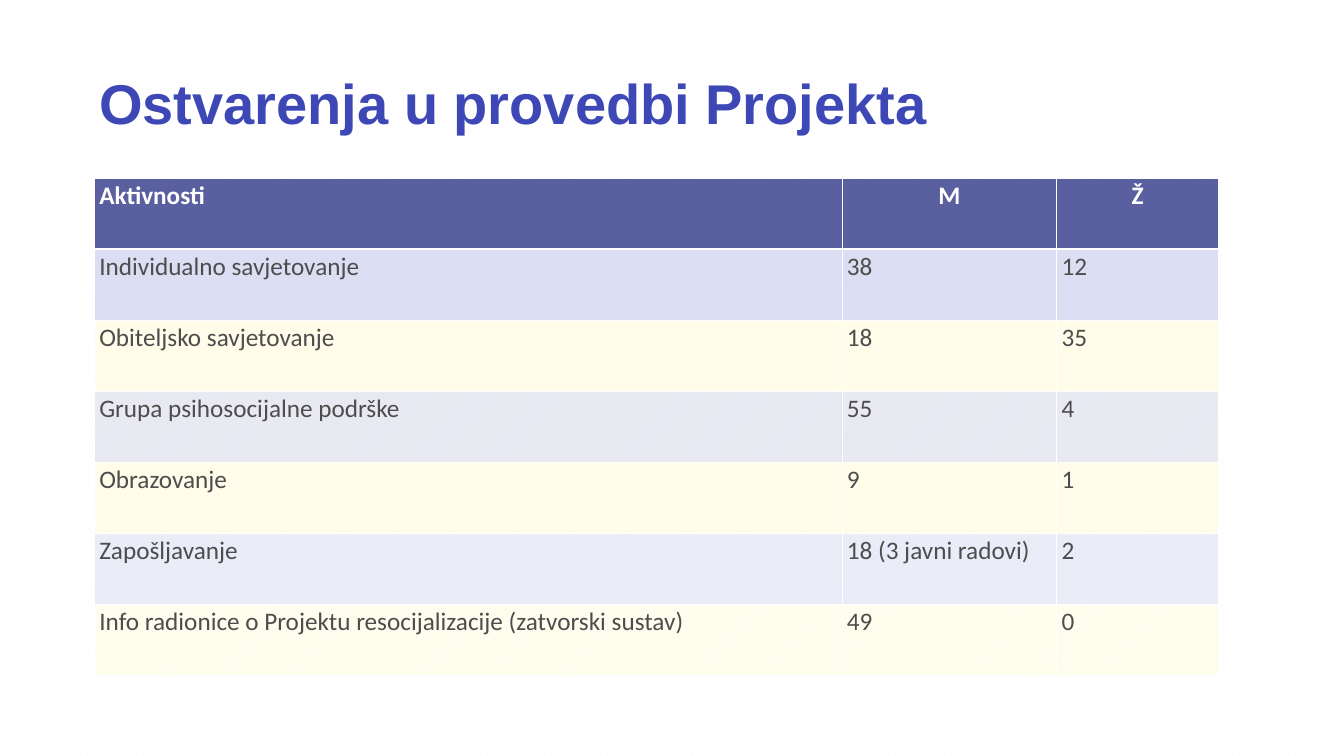
"""Build the slide that tabulates the project's activities by gender."""
from dataclasses import dataclass

from lxml import etree
from pptx import Presentation, util as u
from pptx.dml.color import RGBColor
from pptx.enum import dml, text
from pptx.oxml import ns

PX = 9144
WHITE = RGBColor(0xFF, 0xFF, 0xFF)
PALE_BLUE = RGBColor(0xF9, 0xF9, 0xFF)
TITLE_BLUE = RGBColor(0x3D, 0x47, 0xB5)
HEADER_BLUE = RGBColor(0x5A, 0x60, 0x9F)
LAVENDER = RGBColor(0xC7, 0xCA, 0xEC)
CREAM = RGBColor(0xFF, 0xFC, 0xE9)
SLATE = RGBColor(0x9B, 0x9F, 0xC6)
PERIWINKLE = RGBColor(0xAB, 0xB0, 0xE3)
YELLOW = RGBColor(0xFF, 0xFA, 0xB7)
GREY = RGBColor(0x4D, 0x4D, 0x4D)

COLUMN_WIDTHS = (1483, 426, 321)
ROW_HEIGHT = 141
THIN, THICK = 1, 3


@dataclass(frozen=True)
class Activity:
    """One table row with its fill and opacity in percent."""
    name: str
    men: str
    women: str
    fill: RGBColor
    opacity: int = 100
    header: bool = False


ACTIVITIES = (
    Activity("Aktivnosti", "M", "Ž", HEADER_BLUE, header=True),
    Activity("Individualno savjetovanje", "38", "12", LAVENDER, 62),
    Activity("Obiteljsko savjetovanje", "18", "35", CREAM),
    Activity("Grupa psihosocijalne podrške", "55", "4", SLATE, 22),
    Activity("Obrazovanje", "9", "1", CREAM),
    Activity("Zapošljavanje", "18 (3 javni radovi)", "2", PERIWINKLE, 24),
    Activity("Info radionice o Projektu resocijalizacije (zatvorski sustav)",
             "49", "0", YELLOW, 24),
)


def px(length: int) -> u.Emu:
    """Turn px into EMU."""
    return u.Emu(length * PX)


def add_run(paragraph, words: str, font: str, size: int, color: RGBColor, bold: bool) -> None:
    """Append one styled run."""
    run = paragraph.add_run()
    run.text = words
    run.font.name = font
    run.font.size = u.Pt(size)
    run.font.bold = bold
    run.font.color.rgb = color


def fill_cell(cell, color: RGBColor, opacity: int) -> None:
    """Fill a cell, see-through where the opacity is below 100."""
    cell.fill.solid()
    cell.fill.fore_color.rgb = color
    if opacity < 100:
        tint = cell._tc.tcPr.find(".//" + ns.qn("a:srgbClr"))
        etree.SubElement(tint, ns.qn("a:alpha"), val=str(opacity * 1000))


def border_cell(cell, top: int, bottom: int) -> None:
    """Draw white borders, with top and bottom widths in points."""
    sides = {"L": THIN, "R": THIN, "T": top, "B": bottom}
    for place, (side, width) in enumerate(sides.items()):
        line = etree.Element(ns.qn(f"a:ln{side}"), w=str(u.Pt(width)))
        solid = etree.SubElement(line, ns.qn("a:solidFill"))
        etree.SubElement(solid, ns.qn("a:srgbClr"), val=str(WHITE))
        cell._tc.tcPr.insert(place, line)


def add_title(slide, words: str) -> None:
    """Add the slide heading."""
    frame = slide.shapes.add_textbox(px(187), px(131), px(1868), px(145)).text_frame
    frame.word_wrap = True
    frame.auto_size = text.MSO_AUTO_SIZE.SHAPE_TO_FIT_TEXT
    add_run(frame.paragraphs[0], words, "Arial", 80, TITLE_BLUE, True)


def add_activity_table(slide, activities: tuple[Activity, ...]) -> None:
    """Add the table with one row per activity."""
    table = slide.shapes.add_table(
        len(activities), len(COLUMN_WIDTHS), px(187), px(353),
        px(sum(COLUMN_WIDTHS)), px(ROW_HEIGHT * len(activities))).table
    table.horz_banding = False
    for column, width in zip(table.columns, COLUMN_WIDTHS):
        column.width = px(width)
    for index, (row, activity) in enumerate(zip(table.rows, activities)):
        row.height = px(ROW_HEIGHT)
        entries = (activity.name, activity.men, activity.women)
        for position, (cell, entry) in enumerate(zip(row.cells, entries)):
            fill_cell(cell, activity.fill, activity.opacity)
            border_cell(cell, THICK if index == 1 else THIN, THICK if activity.header else THIN)
            paragraph = cell.text_frame.paragraphs[0]
            if activity.header and position:
                paragraph.alignment = text.PP_ALIGN.CENTER
            add_run(paragraph, entry, "Calibri", 36,
                    WHITE if activity.header else GREY, activity.header)


def main() -> None:
    """Build and save the slide."""
    deck = Presentation()
    deck.slide_width, deck.slide_height = px(2666), px(1500)
    slide = deck.slides.add_slide(deck.slide_layouts[6])
    backdrop = slide.background.fill
    backdrop.patterned()
    backdrop.pattern = dml.MSO_PATTERN.PERCENT_5
    backdrop.fore_color.rgb = PALE_BLUE
    backdrop.back_color.rgb = WHITE
    add_title(slide, "Ostvarenja u provedbi Projekta")
    add_activity_table(slide, ACTIVITIES)
    deck.save("out.pptx")


if __name__ == "__main__":
    main()
